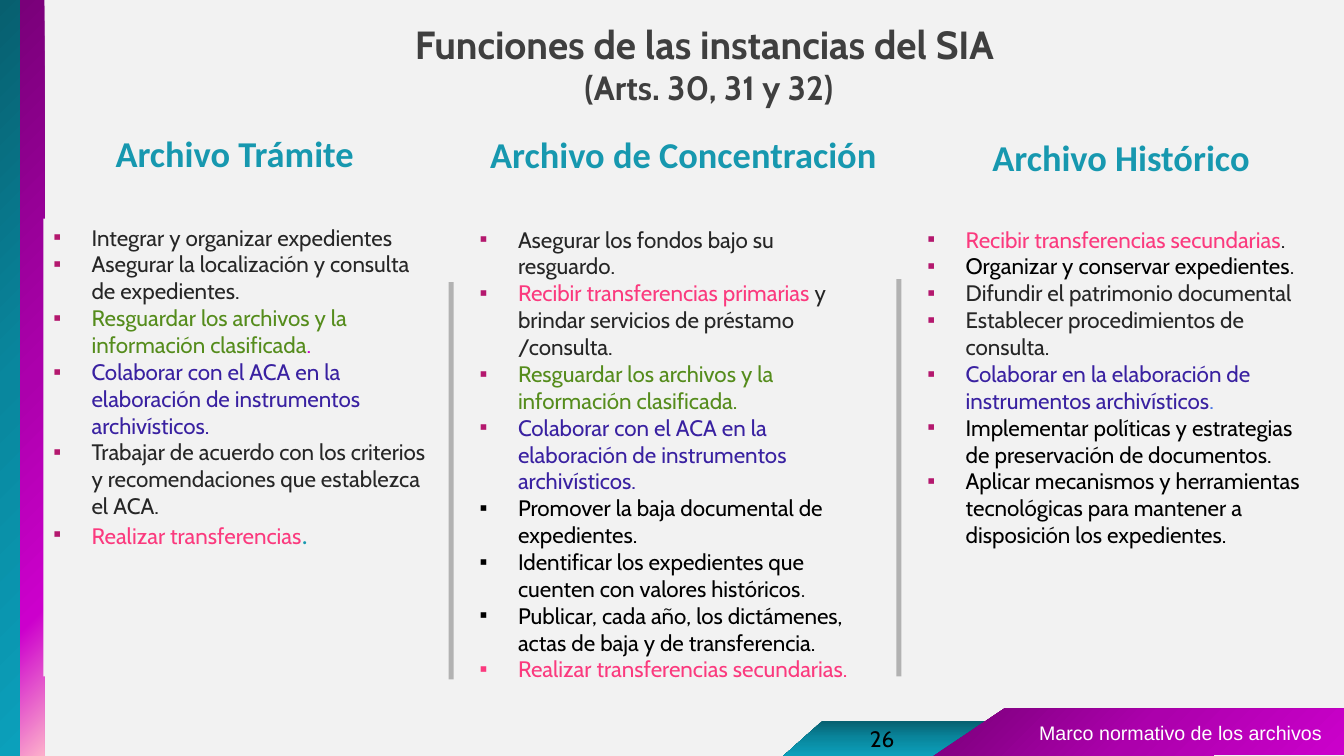
from dataclasses import dataclass
from typing import NamedTuple

from lxml import etree
from pptx import Presentation
from pptx.dml.color import RGBColor
from pptx.enum.shapes import MSO_SHAPE as Preset
from pptx.enum.text import MSO_ANCHOR as Anchor, MSO_AUTO_SIZE as AutoSize, PP_ALIGN as Align
from pptx.oxml.ns import qn
from pptx.util import Inches, Pt


@dataclass(frozen=True)
class Theme:
    body_font: str = "Cabin"
    head_font: str = "Calibri"
    plain_font: str = "Arial"
    title: int = 28
    subtitle: int = 24
    heading: int = 26
    period: int = 18
    body: int = 16
    footer: int = 14
    paper: str = "F2F2F2"
    white: str = "FFFFFF"
    black: str = "000000"
    ink: str = "262626"
    title_ink: str = "3F3F3F"
    teal: str = "1798AF"
    green: str = "558C1C"
    indigo: str = "3921A1"
    pink: str = "FB3A7E"
    blue: str = "4775E7"
    magenta: str = "CC00CC"
    bullet: str = "B4186E"
    divider: str = "B2B2B2"
    teal_blend: tuple = ((0, "075F6F"), (50, "09879E"), (100, "0BA0BB"))
    purple_blend: tuple = ((0, "790079"), (50, "AC00AC"), (100, "CC00CC"))
    sunset_blend: tuple = ((0, "790079"), (50, "AC00AC"), (81, "CC00CC"), (100, "FDB0CB"))


T = Theme()


class Area(NamedTuple):
    left: float
    top: float
    width: float
    height: float

    def emu(self) -> list:
        return [Inches(v) for v in self]


class Run(NamedTuple):
    text: str
    color: str = T.ink
    size: int = T.body
    font: str = T.body_font


class Item(NamedTuple):
    runs: tuple
    bullet: str | None = T.bullet


class Column(NamedTuple):
    heading: str
    heading_area: Area
    area: Area
    fill: str | None
    items: tuple


def item(text: str, color: str = T.ink, *more: Run, bullet: str | None = T.bullet) -> Item:
    return Item((Run(text, color), *more), bullet)


PROTECT = "Resguardar los archivos y la información clasificada"
COLLABORATE = "Colaborar con el ACA en la elaboración de instrumentos archivísticos."
STOP = Run(".")

COLUMNS = (
    Column("Archivo Trámite ", Area(0.4, 1.25, 3.94, 0.6), Area(0.43, 2.17, 3.98, 4.54), T.paper, (
        item("Integrar y organizar expedientes"),
        item("Asegurar la localización y consulta de expedientes."),
        item(PROTECT, T.green, Run(".", T.magenta)),
        item(COLLABORATE, T.indigo),
        item("Trabajar de acuerdo con los criterios y recomendaciones que establezca el ACA."),
        item("Realizar transferencias", T.pink, Run(".", T.teal, T.period, T.head_font)),
    )),
    Column("Archivo de Concentración", Area(4.66, 1.26, 4.24, 0.6), Area(4.66, 2.19, 4.06, 4.65), None, (
        item("Asegurar los fondos bajo su resguardo."),
        item("Recibir transferencias primarias ", T.pink,
             Run("y brindar servicios de préstamo /consulta.")),
        item(PROTECT + ".", T.green),
        item(COLLABORATE, T.indigo),
        item("Promover la baja documental de expedientes.", T.black, bullet=None),
        item("Identificar los expedientes que cuenten con valores históricos", T.black, STOP, bullet=None),
        item("Publicar, cada año, los dictámenes, actas de baja y de transferencia.", T.black, bullet=None),
        item("Realizar transferencias secundarias.", T.pink, bullet=None),
    )),
    Column("Archivo Histórico", Area(9.15, 1.29, 3.94, 0.6), Area(9.1, 2.19, 4.05, 4.65), T.paper, (
        item("Recibir transferencias secundarias", T.pink, STOP),
        item("Organizar y conservar expedientes", T.black, STOP),
        item("Difundir el patrimonio documental"),
        item("Establecer procedimientos de consulta."),
        item("Colaborar en la elaboración de instrumentos archivísticos", T.indigo, Run(".", T.blue)),
        item("Implementar políticas y estrategias de preservación de documentos.", T.black),
        item("Aplicar mecanismos y herramientas tecnológicas para mantener a disposición "
             "los expedientes.", T.black),
    )),
)


def write(p, text: str, *, size: int, color: str, font: str = T.body_font, bold: bool = False) -> None:
    r = p.add_run()
    r.text = text
    r.font.size = Pt(size)
    r.font.name = font
    r.font.bold = bold
    r.font.color.rgb = RGBColor.from_string(color)


def prepare(tf):
    tf.word_wrap = True
    tf.auto_size = AutoSize.NONE
    tf.vertical_anchor = Anchor.TOP
    return tf


def add_label(s, area: Area, text: str, **style) -> None:
    p = prepare(s.shapes.add_textbox(*area.emu()).text_frame).paragraphs[0]
    p.alignment = Align.CENTER
    write(p, text, **style)


def finish(sp, fill: str | None = None, blend: tuple = (), angle: int = 45) -> None:
    sp.shadow.inherit = False
    sp.line.fill.background()
    if blend:
        sp.fill.gradient()
        grad = sp.fill._xPr.find(qn("a:gradFill"))
        for child in list(grad):
            grad.remove(child)
        stops = etree.SubElement(grad, qn("a:gsLst"))
        for pos, color in blend:
            gs = etree.SubElement(stops, qn("a:gs"), pos=str(pos * 1000))
            etree.SubElement(gs, qn("a:srgbClr"), val=color)
        etree.SubElement(grad, qn("a:lin"), ang=str(angle * 60000), scaled="0")
    elif fill:
        sp.fill.solid()
        sp.fill.fore_color.rgb = RGBColor.from_string(fill)
    else:
        sp.fill.background()


def add_block(s, area: Area, preset: Preset = Preset.RECTANGLE, **look):
    sp = s.shapes.add_shape(preset, *area.emu())
    finish(sp, **look)
    return sp


def set_bullet(p, color: str | None) -> None:
    pPr = p._p.get_or_add_pPr()
    pPr.set("marL", str(Inches(0.38)))
    pPr.set("indent", str(-Inches(0.38)))
    if color:
        etree.SubElement(etree.SubElement(pPr, qn("a:buClr")), qn("a:srgbClr"), val=color)
    etree.SubElement(pPr, qn("a:buFont"), typeface=T.plain_font)
    etree.SubElement(pPr, qn("a:buChar"), char="▪")
    tabs = etree.SubElement(pPr, qn("a:tabLst"))
    etree.SubElement(tabs, qn("a:tab"), pos=str(Inches(0.5)), algn="l")


def add_column(s, column: Column) -> None:
    add_label(s, column.heading_area, column.heading, size=T.heading, color=T.teal,
              font=T.head_font, bold=True)
    tf = prepare(add_block(s, column.area, fill=column.fill).text_frame)
    for i, entry in enumerate(column.items):
        p = tf.add_paragraph() if i else tf.paragraphs[0]
        p.alignment = Align.LEFT
        set_bullet(p, entry.bullet)
        for run in entry.runs:
            write(p, run.text, size=run.size, color=run.color, font=run.font)


def add_frame(s) -> None:
    add_block(s, Area(0, 0, 0.2, 7.5), blend=T.teal_blend)
    tab = add_block(s, Area(7.77, 7.15, 2.6, 0.35), Preset.PARALLELOGRAM, blend=T.teal_blend, angle=90)
    tab.adjustments[0] = 1.11
    outline = [(9.96, 7.03), (13.36, 7.03), (13.36, 7.49), (12.04, 7.49), (12.03, 7.5), (9.26, 7.5)]
    points = [(Inches(x), Inches(y)) for x, y in outline]
    fb = s.shapes.build_freeform(*points[0])
    fb.add_line_segments(points[1:], close=True)
    finish(fb.convert_to_shape(), blend=T.purple_blend)
    add_label(s, Area(9.78, 7.1, 3.86, 0.34), "Marco normativo de los archivos",
              size=T.footer, color=T.white, font=T.plain_font)
    add_block(s, Area(0.2, 0, 0.24, 7.5), blend=T.sunset_blend)
    for left, top in ((4.45, 2.8), (8.89, 2.77)):
        add_block(s, Area(left, top, 0.05, 3.94), fill=T.divider)


def add_title(s) -> None:
    sp = s.shapes.title
    sp.left, sp.top, sp.width, sp.height = Area(1.71, 0.15, 10.64, 1.22).emu()
    p = prepare(sp.text_frame).paragraphs[0]
    p.alignment = Align.CENTER
    write(p, "Funciones de las instancias del SIA ", size=T.title, color=T.title_ink, bold=True)
    p.add_line_break()
    write(p, "(Arts. 30, 31 y 32)", size=T.subtitle, color=T.title_ink, bold=True)


def main() -> None:
    prs = Presentation()
    prs.slide_width, prs.slide_height = Inches(13.33), Inches(7.5)
    s = prs.slides.add_slide(prs.slide_layouts[5])
    s.background.fill.solid()
    s.background.fill.fore_color.rgb = RGBColor.from_string(T.paper)
    add_frame(s)
    add_title(s)
    for column in COLUMNS:
        add_column(s, column)
    add_label(s, Area(7.25, 7.14, 3, 0.4), "26", size=T.body, color=T.black)
    prs.save("out.pptx")


if __name__ == "__main__":
    main()
